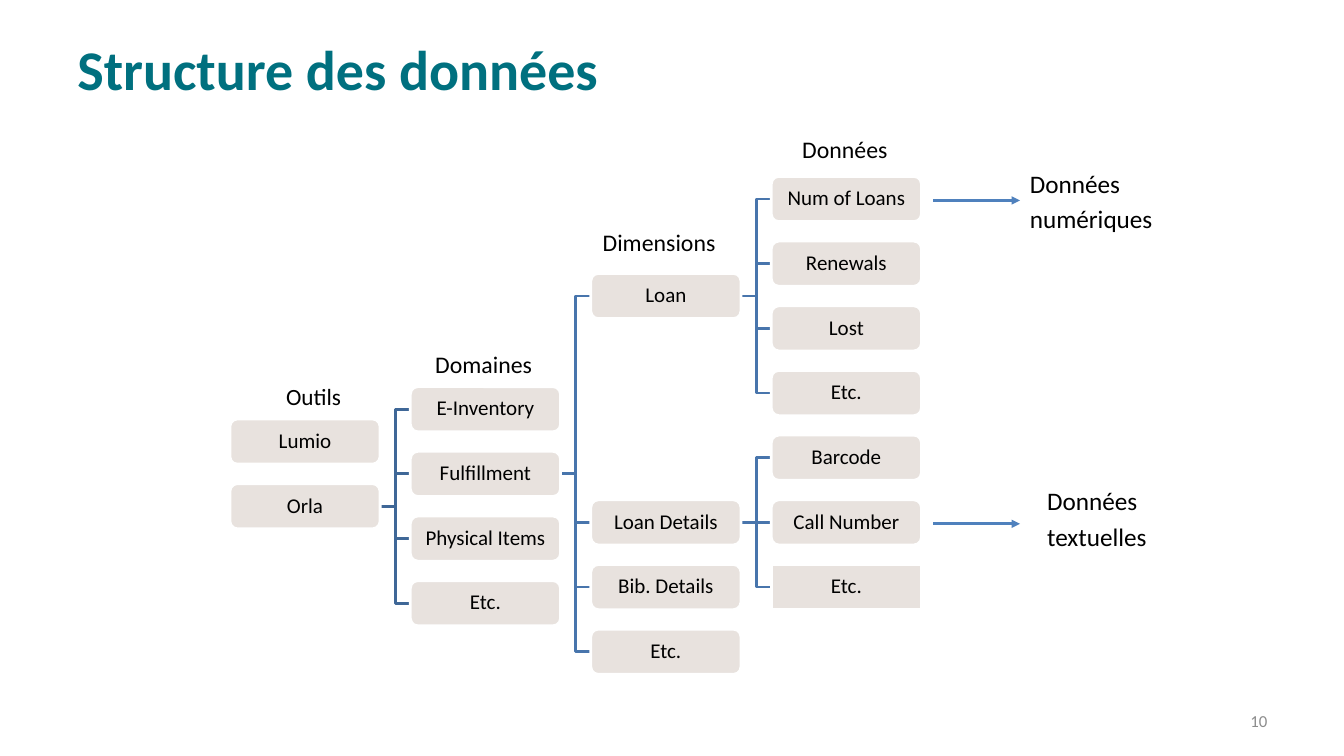
from lxml import etree
from pptx import Presentation
from pptx import util as u
from pptx.dml.color import RGBColor
from pptx.enum import shapes, text
from pptx.oxml.ns import qn

INK, SAND, WHITE = "000000", "E8E2DE", "FFFFFF"
LINK_FIRST, LINK, ARROW = "3F6797", "4875AC", "4F81BD"
LEFT, TOP = 164.2, 126
BOX_W, BOX_H = 107.3, 32.3
COL_STEP, ROW_STEP = 128.9, 46.2

GROUPS = [
    (0, 3.75, ["Lumio", "Orla"]),
    (1, 3.25, ["E-Inventory", "Fulfillment", "Physical Items", "Etc."]),
    (2, 1.5, ["Loan"]),
    (2, 5, ["Loan Details", "Bib. Details", "Etc."]),
    (3, 0, ["Num of Loans", "Renewals", "Lost", "Etc."]),
    (3, 4, ["Barcode", "Call Number", "Etc."]),
]
PARENTS = [("Orla", [1]), ("Fulfillment", [2, 3]), ("Loan", [4]), ("Loan Details", [5])]
SQUARE = (3, 6)
ARROW_ROWS = [0, 5]
ARROW_X = (666.7, 728.6)

L, C, R = text.PP_ALIGN.LEFT, text.PP_ALIGN.CENTER, text.PP_ALIGN.RIGHT
TOP_ANCHOR, MIDDLE = text.MSO_ANCHOR.TOP, text.MSO_ANCHOR.MIDDLE
LABELS = [
    (48.2, 24.5, 864, 49, ["Structure des données"], 40, "00707F", True, L, MIDDLE),
    (688.3, 500.4, 224, 28.8, ["10"], 12, "8C8C8C", False, R, MIDDLE),
    (197.3, 269.3, 55.4, 29.5, ["Outils"], 16.6, INK, False, L, TOP_ANCHOR),
    (303.8, 246.2, 86.4, 29.5, ["Domaines"], 17, INK, False, L, TOP_ANCHOR),
    (423.4, 159.1, 100.8, 36, ["Dimensions"], 17, INK, False, L, TOP_ANCHOR),
    (565.9, 92.9, 100.8, 36, ["Données"], 17, INK, False, L, TOP_ANCHOR),
    (728.6, 116.6, 112.3, 62, ["Données", "numériques"], 18, INK, False, L, TOP_ANCHOR),
    (740.9, 343.4, 112.3, 62, ["Données", "textuelles"], 18, INK, False, L, TOP_ANCHOR),
]


def color(h):
    return RGBColor.from_string(h)


def apply(obj, values):
    for name, value in values.items():
        setattr(obj, name, value)


def write(sp, lines, size, ink, bold, align, anchor, inset=None):
    tf = sp.text_frame
    apply(tf, {"word_wrap": True, "vertical_anchor": anchor})
    if inset is not None:
        sides = ("margin_left", "margin_top", "margin_right", "margin_bottom")
        apply(tf, dict.fromkeys(sides, u.Pt(inset)))
    for i, line in enumerate(lines):
        p = tf.paragraphs[0] if i == 0 else tf.add_paragraph()
        p.alignment = align
        if i:
            p.space_before = u.Pt(size * 0.2)
        r = p.add_run()
        r.text = line
        apply(r.font, {"name": "Calibri", "size": u.Pt(size), "bold": bold})
        r.font.color.rgb = color(ink)


def add_box(s, col, row, label):
    kind = shapes.MSO_SHAPE.RECTANGLE if (col, row) == SQUARE else shapes.MSO_SHAPE.ROUNDED_RECTANGLE
    x, y = LEFT + col * COL_STEP, TOP + row * ROW_STEP
    sp = s.shapes.add_shape(kind, u.Pt(x), u.Pt(y), u.Pt(BOX_W), u.Pt(BOX_H))
    sp.shadow.inherit = False
    sp.fill.solid()
    sp.fill.fore_color.rgb = color(SAND)
    sp.line.color.rgb = color(WHITE)
    sp.line.width = u.Pt(2)
    write(sp, [label], 15, INK, False, C, MIDDLE, 0.7)
    sp.text_frame.paragraphs[0].line_spacing = 0.9
    return sp


def add_line(s, kind, x1, y1, x2, y2, ink):
    cx = s.shapes.add_connector(kind, x1, y1, x2, y2)
    cx.line.color.rgb = color(ink)
    cx.line.width = u.Pt(2)
    etree.SubElement(cx._element.spPr, qn("a:effectLst"))
    return cx


def link(s, parent, child, ink):
    level = parent.top == child.top
    kind = shapes.MSO_CONNECTOR.STRAIGHT if level else shapes.MSO_CONNECTOR.ELBOW
    cx = add_line(s, kind, 0, 0, 0, 0, ink)
    cx.begin_connect(parent, 3)
    cx.end_connect(child, 1)
    s.shapes._spTree.insert(2, cx._element)


def main():
    prs = Presentation()
    apply(prs, {"slide_width": u.Pt(960), "slide_height": u.Pt(540)})
    s = prs.slides.add_slide(prs.slide_layouts[6])

    boxes = [[add_box(s, col, start + i, label) for i, label in enumerate(labels)]
             for col, start, labels in GROUPS]
    by_label = {sp.text_frame.text: sp for group in boxes for sp in group}
    for name, children in PARENTS:
        for g in children:
            for child in boxes[g]:
                link(s, by_label[name], child, LINK_FIRST if g == 1 else LINK)

    for x, y, w, h, *style in LABELS:
        write(s.shapes.add_textbox(u.Pt(x), u.Pt(y), u.Pt(w), u.Pt(h)), *style)

    x1, x2 = map(u.Pt, ARROW_X)
    for row in ARROW_ROWS:
        y = u.Pt(TOP + row * ROW_STEP + BOX_H / 2 + 1)
        cx = add_line(s, shapes.MSO_CONNECTOR.STRAIGHT, x1, y, x2, y, ARROW)
        etree.SubElement(cx.line._get_or_add_ln(), qn("a:tailEnd"), type="triangle")

    prs.save("out.pptx")


if __name__ == "__main__":
    main()
